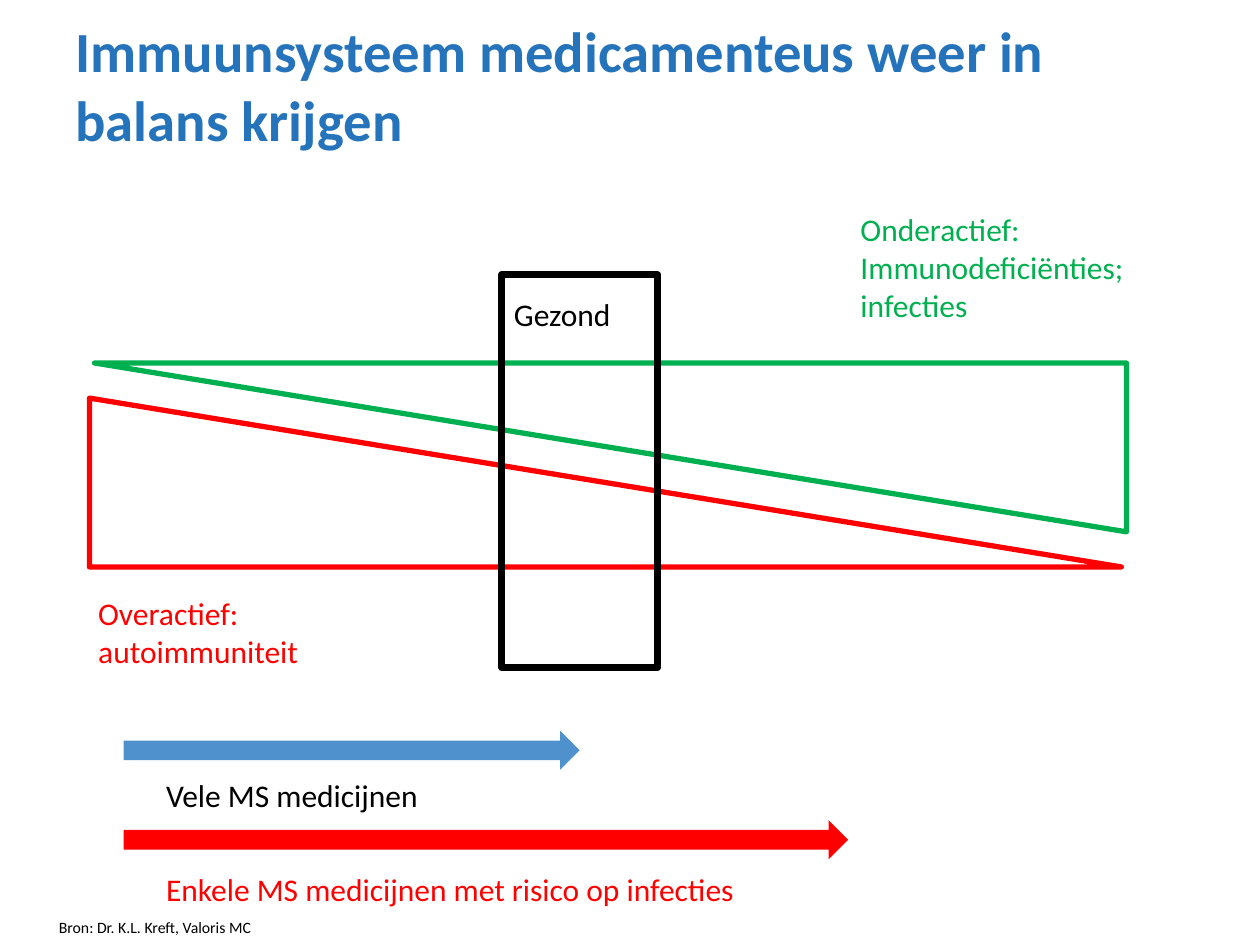
from pptx import Presentation
from pptx.dml.color import RGBColor as RGB
from pptx.enum.shapes import MSO_SHAPE as Kind
from pptx.enum.text import MSO_ANCHOR as Anchor, PP_ALIGN as Align
from pptx.oxml.ns import qn
from pptx.util import Pt
from lxml.etree import SubElement

HUES = {"title": "2573BA", "red": "FF0000", "green": "00B050",
        "black": "000000", "blue": "4F91CD"}

deck = Presentation()
deck.slide_width, deck.slide_height = Pt(720), Pt(540)
slide = deck.slides.add_slide(deck.slide_layouts[5])


def write(frame, lines, size, hue, bold=False):
    frame.word_wrap = True
    frame.text = "\n".join(lines)
    look = {"name": "Calibri", "size": Pt(size), "bold": bold}
    for para in frame.paragraphs:
        para.alignment = Align.LEFT
        font = para.runs[0].font
        for key, value in look.items():
            setattr(font, key, value)
        font.color.rgb = RGB.from_string(HUES[hue])


def draw(kind, box, fill=None, edge=None, width=0):
    shape = slide.shapes.add_shape(kind, *map(Pt, box))
    shape.shadow.inherit = False
    if fill:
        shape.fill.solid()
        shape.fill.fore_color.rgb = RGB.from_string(HUES[fill])
    else:
        shape.fill.background()
    if edge:
        shape.line.color.rgb = RGB.from_string(HUES[edge])
        shape.line.width = Pt(width)
        SubElement(shape.line._get_or_add_ln(), qn("a:round"))
    else:
        shape.line.fill.background()
    return shape


title = slide.shapes.title
title.left, title.top, title.width, title.height = map(Pt, (36, 0.7, 648, 90))
write(title.text_frame, ["Immuunsysteem medicamenteus weer in balans krijgen"],
      32.4, "title", True)
title.text_frame.vertical_anchor = Anchor.BOTTOM

wedges = [("red", 51.1, 227.5, 0), ("green", 54, 207.4, 180)]
for hue, left, top, turn in wedges:
    wedge = draw(Kind.RIGHT_TRIANGLE, (left, top, 589.7, 96.5), edge=hue, width=3)
    wedge.rotation = turn

draw(Kind.RECTANGLE, (286.6, 157, 89.3, 224.6), edge="black", width=3.75)

arrows = [("blue", 417.6, 260.6), ("red", 468.7, 414)]
for hue, top, width in arrows:
    draw(Kind.RIGHT_ARROW, (70.6, top, width, 22.3), fill=hue)

labels = [
    (["Overactief:", "autoimmuniteit"], (49, 336.2, 218, 55.4), 18, "red"),
    (["Onderactief:", "Immunodeficiënties;", "infecties"],
     (484.6, 116.6, 215, 80), 18, "green"),
    (["Gezond"], (286.6, 164.9, 153, 31.7), 18, "black"),
    (["Vele MS medicijnen"], (87.8, 439.9, 243, 31.7), 18, "black"),
    (["Enkele MS medicijnen met risico op infecties"],
     (87.8, 493.9, 442, 31.7), 18, "red"),
    (["Bron: Dr. K.L. Kreft, Valoris MC"], (26.6, 520.6, 667, 18), 9, "black"),
]
for lines, box, size, hue in labels:
    label = slide.shapes.add_textbox(*map(Pt, box))
    write(label.text_frame, lines, size, hue)

deck.save("out.pptx")
